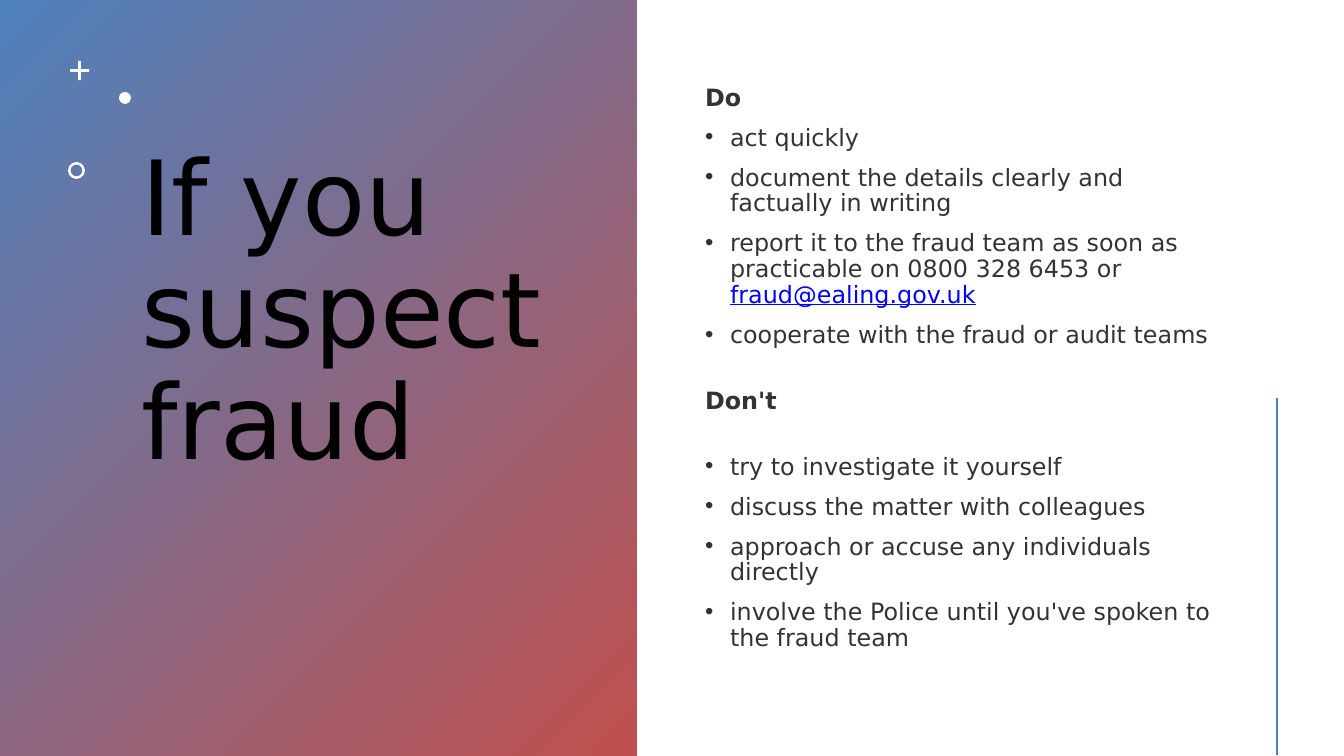
from dataclasses import dataclass

from lxml.etree import SubElement
from pptx import Presentation
from pptx.dml.color import RGBColor
from pptx.enum.shapes import MSO_CONNECTOR as Link, MSO_SHAPE as Kind
from pptx.enum.text import MSO_ANCHOR as Anchor, MSO_AUTO_SIZE as Fit, PP_ALIGN as Align
from pptx.oxml.ns import qn
from pptx.util import Emu, Pt

FONT = "DejaVu Sans"
INK = "333333"
BLUE = "4F81BD"
RED = "C0504D"
WHITE = "FFFFFF"
LINK = "0000FF"
LEAD = 18.5
GAP = 10
INDENT = 25


@dataclass
class Box:
    left: int
    top: int
    width: int
    height: int


@dataclass
class Mark:
    kind: Kind
    box: Box
    adjust: float | None = None


@dataclass
class Item:
    text: str
    head: bool = False
    gap: float = GAP
    mail: str = ""


MARKS = [
    Mark(Kind.CROSS, Box(70, 61, 19, 19), 0.43),
    Mark(Kind.OVAL, Box(119, 92, 12, 12)),
    Mark(Kind.DONUT, Box(68, 162, 17, 17), 0.15),
]
ITEMS = [
    Item("Do", head=True, gap=0),
    Item("act quickly"),
    Item("document the details clearly and factually in writing"),
    Item("report it to the fraud team as soon as practicable on 0800 328 6453 or ",
         mail="fraud@ealing.gov.uk"),
    Item("cooperate with the fraud or audit teams"),
    Item("Don't", head=True, gap=GAP + LEAD),
    Item("try to investigate it yourself", gap=GAP + LEAD),
    Item("discuss the matter with colleagues"),
    Item("approach or accuse any individuals directly"),
    Item("involve the Police until you've spoken to the fraud team"),
]


def px(count: int) -> Emu:
    return Emu(round(count * 914400 / 100.8))


def tint(code: str) -> RGBColor:
    return RGBColor.from_string(code)


def place(shape, box: Box) -> None:
    shape.left, shape.top = px(box.left), px(box.top)
    shape.width, shape.height = px(box.width), px(box.height)


def add(slide, kind: Kind, box: Box):
    shape = slide.shapes.add_shape(kind, 0, 0, 0, 0)
    place(shape, box)
    shape.shadow.inherit = False
    shape.line.fill.background()
    return shape


def draw_panel(slide) -> None:
    panel = add(slide, Kind.RECTANGLE, Box(0, 0, 637, 756))
    panel.fill.gradient()
    panel.fill.gradient_angle = 315
    for stop, spot, code in zip(panel.fill.gradient_stops, (0, 1), (BLUE, RED)):
        stop.position = spot
        stop.color.rgb = tint(code)
    slide.shapes._spTree.insert(2, panel._element)


def draw_mark(slide, mark: Mark) -> None:
    shape = add(slide, mark.kind, mark.box)
    shape.fill.solid()
    shape.fill.fore_color.rgb = tint(WHITE)
    if mark.adjust is not None:
        shape.adjustments[0] = mark.adjust


def draw_rule(slide) -> None:
    rule = slide.shapes.add_connector(Link.STRAIGHT, px(1277), px(398), px(1277), px(755))
    rule.line.color.rgb = tint(BLUE)
    rule.line.width = Pt(2)
    SubElement(rule._element.spPr, qn("a:effectLst"))


def set_frame(shape, box: Box):
    place(shape, box)
    frame = shape.text_frame
    frame.word_wrap = True
    frame.auto_size = Fit.NONE
    frame.vertical_anchor = Anchor.TOP
    frame.margin_top = 0
    return frame


def style(para, size: int, code: str, lead: float, bold: bool = False) -> None:
    para.alignment = Align.LEFT
    para.line_spacing = Pt(lead)
    para.font.name = FONT
    para.font.size = Pt(size)
    para.font.bold = bold
    para.font.color.rgb = tint(code)


def write_title(slide) -> None:
    frame = set_frame(slide.shapes.title, Box(131, 144, 442, 556))
    frame.text = "If you suspect fraud"
    style(frame.paragraphs[0], 74, "000000", 80)


def write_item(para, item: Item) -> None:
    style(para, 17, INK, LEAD, item.head)
    para.space_before = Pt(item.gap)
    para.space_after = Pt(0)
    runs = [(item.text, INK), (item.mail, LINK)] if item.mail else [(item.text, INK)]
    for text, code in runs:
        run = para.add_run()
        run.text = text
        run.font.name = FONT
        run.font.size = Pt(17)
        run.font.bold = item.head
        run.font.color.rgb = tint(code)
        run.font.underline = code == LINK
    props = para._p.get_or_add_pPr()
    dent = 0 if item.head else px(INDENT)
    props.set("marL", str(int(dent)))
    props.set("indent", str(-int(dent)))
    bullet = props.makeelement(qn("a:buNone" if item.head else "a:buChar"), {})
    if not item.head:
        bullet.set("char", "•")
    props.find(qn("a:defRPr")).addprevious(bullet)


def write_list(slide) -> None:
    frame = set_frame(slide.placeholders[1], Box(695, 85, 526, 615))
    for rank, item in enumerate(ITEMS):
        write_item(frame.add_paragraph() if rank else frame.paragraphs[0], item)


def main() -> None:
    """Build the slide on what to do when fraud is suspected."""
    deck = Presentation()
    deck.slide_width, deck.slide_height = px(1344), px(756)
    slide = deck.slides.add_slide(deck.slide_layouts[1])
    draw_panel(slide)
    write_title(slide)
    for mark in MARKS:
        draw_mark(slide, mark)
    write_list(slide)
    draw_rule(slide)
    deck.save("out.pptx")


if __name__ == "__main__":
    main()
